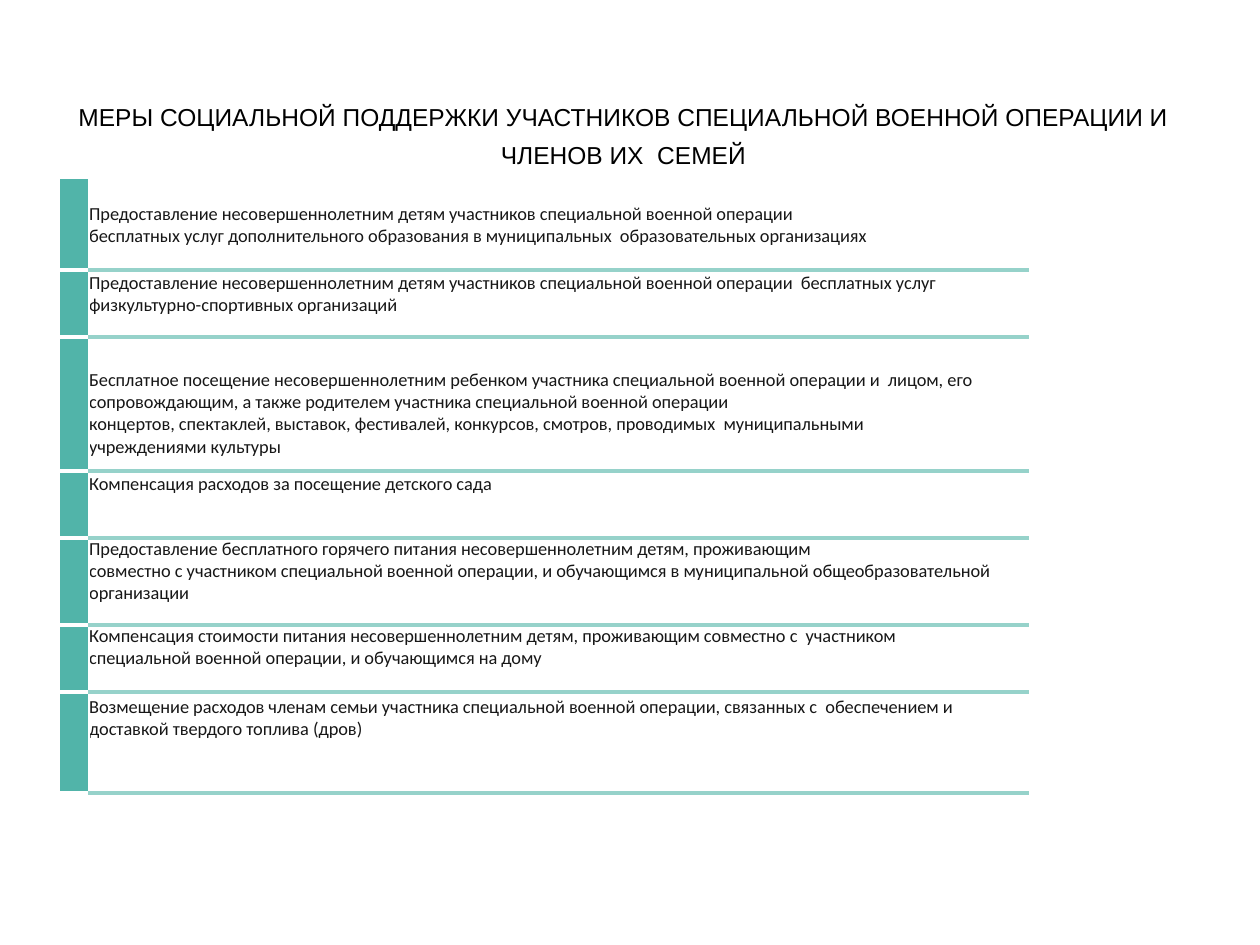
import pptx
import pptx.util
import pptx.dml.color
import pptx.enum.text
import pptx.oxml
import pptx.oxml.ns

TITLE = ("МЕРЫ СОЦИАЛЬНОЙ ПОДДЕРЖКИ УЧАСТНИКОВ СПЕЦИАЛЬНОЙ ВОЕННОЙ ОПЕРАЦИИ И "
         "ЧЛЕНОВ ИХ  СЕМЕЙ")

# (row height px, space above the text px, paragraphs); \v is a line break
MEASURES = [
    (92, 25, ["Предоставление несовершеннолетним детям участников специальной военной операции",
              "бесплатных услуг дополнительного образования в муниципальных  "
              "образовательных организациях"]),
    (67, 2, ["Предоставление несовершеннолетним детям участников специальной военной операции  "
             "бесплатных услуг физкультурно-спортивных организаций"]),
    (134, 32, ["Бесплатное посещение несовершеннолетним ребенком участника специальной военной "
               "операции и  лицом, его сопровождающим, а также родителем участника "
               "специальной военной операции",
               "концертов, спектаклей, выставок, фестивалей, конкурсов, смотров, "
               "проводимых  муниципальными\vучреждениями культуры"]),
    (67, 2, ["Компенсация расходов за посещение детского сада"]),
    (87, 0, ["Предоставление бесплатного горячего питания несовершеннолетним детям, проживающим",
             "совместно с участником специальной военной операции, и обучающимся в "
             "муниципальной общеобразовательной организации"]),
    (67, 0, ["Компенсация стоимости питания несовершеннолетним детям, проживающим совместно "
             "с  участником\vспециальной военной операции, и обучающимся на дому"]),
    (101, 4, ["Возмещение расходов членам семьи участника специальной военной операции, "
              "связанных с  обеспечением и доставкой твердого топлива (дров)"]),
]

THEME = {
    "title": {"name": "Arial", "size": 14, "color": "000000"},
    "body": {"name": "Calibri", "size": 10.5, "color": "171717"},
    "bar": "51B4A9",
    "rule": "96D2CA",
    "blank": "FFFFFF",
    "thin": 1,
    "thick": 2.25,
}

SLIDE = (1260, 945)
TITLE_BOX = (49, 88, 1149, 81)
TABLE_AT = (59, 178)
COLUMNS = (26, 939)


def px(value):
    return pptx.util.Emu(value * 914400 // 126)


def rgb(value):
    return pptx.dml.color.RGBColor.from_string(value)


def set_all(target, values):
    for name, value in values.items():
        setattr(target, name, value)


def write(para, text, style):
    para.text = text
    set_all(para.font, {"name": style["name"], "size": pptx.util.Pt(style["size"]),
                        "bold": False})
    for span in para.runs:
        set_all(span.font, {"name": style["name"], "size": pptx.util.Pt(style["size"])})
        span.font.color.rgb = rgb(style["color"])


def set_borders(cell, edges):
    """Put borders, given as (side, colour, points) in L, R, T, B order, before the fill."""
    properties = cell._tc.get_or_add_tcPr()
    for index, (side, color, width) in enumerate(edges):
        properties.insert(index, pptx.oxml.parse_xml(
            f'<a:ln{side} {pptx.oxml.ns.nsdecls("a")} w="{int(width * 12700)}">'
            f'<a:solidFill><a:srgbClr val="{color}"/></a:solidFill></a:ln{side}>'))


def add_title(page):
    box = page.shapes.title
    set_all(box, dict(zip(("left", "top", "width", "height"), map(px, TITLE_BOX))))
    set_all(box.text_frame, {
        "margin_left": 0, "margin_top": px(6), "margin_right": 0, "margin_bottom": 0,
        "word_wrap": True, "auto_size": pptx.enum.text.MSO_AUTO_SIZE.NONE,
        "vertical_anchor": pptx.enum.text.MSO_ANCHOR.MIDDLE})
    para = box.text_frame.paragraphs[0]
    write(para, TITLE, THEME["title"])
    set_all(para, {"alignment": pptx.enum.text.PP_ALIGN.CENTER,
                   "line_spacing": pptx.util.Pt(21.6), "space_before": pptx.util.Pt(3.8)})


def fill_measure(cell, gap, paragraphs):
    set_all(cell, {"margin_left": 0, "margin_top": px(gap),
                   "margin_right": 0, "margin_bottom": 0})
    frame = cell.text_frame
    for index, text in enumerate(paragraphs):
        para = frame.add_paragraph() if index else frame.paragraphs[0]
        write(para, text, THEME["body"])
        para.alignment = pptx.enum.text.PP_ALIGN.LEFT


def add_measures(page):
    height = sum(measure[0] for measure in MEASURES)
    table = page.shapes.add_table(len(MEASURES), len(COLUMNS), *map(px, TABLE_AT),
                                  px(sum(COLUMNS)), px(height)).table
    set_all(table, {"first_row": False, "horz_banding": False})
    for column, width in zip(table.columns, COLUMNS):
        column.width = px(width)
    blank, thin, thick = THEME["blank"], THEME["thin"], THEME["thick"]
    for number, (row_height, gap, paragraphs) in enumerate(MEASURES):
        table.rows[number].height = px(row_height)
        bar, measure = table.cell(number, 0), table.cell(number, 1)
        bar.fill.solid()
        bar.fill.fore_color.rgb = rgb(THEME["bar"])
        measure.fill.background()
        fill_measure(measure, gap, paragraphs)
        for cell, color in ((bar, blank), (measure, THEME["rule"])):
            top = (color, thick) if number else (blank, thin)
            set_borders(cell, [("L", blank, thin), ("R", blank, thin),
                               ("T", *top), ("B", color, thick)])


def main():
    deck = pptx.Presentation()
    set_all(deck, dict(zip(("slide_width", "slide_height"), map(px, SLIDE))))
    page = deck.slides.add_slide(deck.slide_layouts.get_by_name("Title Only"))
    add_title(page)
    add_measures(page)
    deck.save("out.pptx")


if __name__ == "__main__":
    main()
